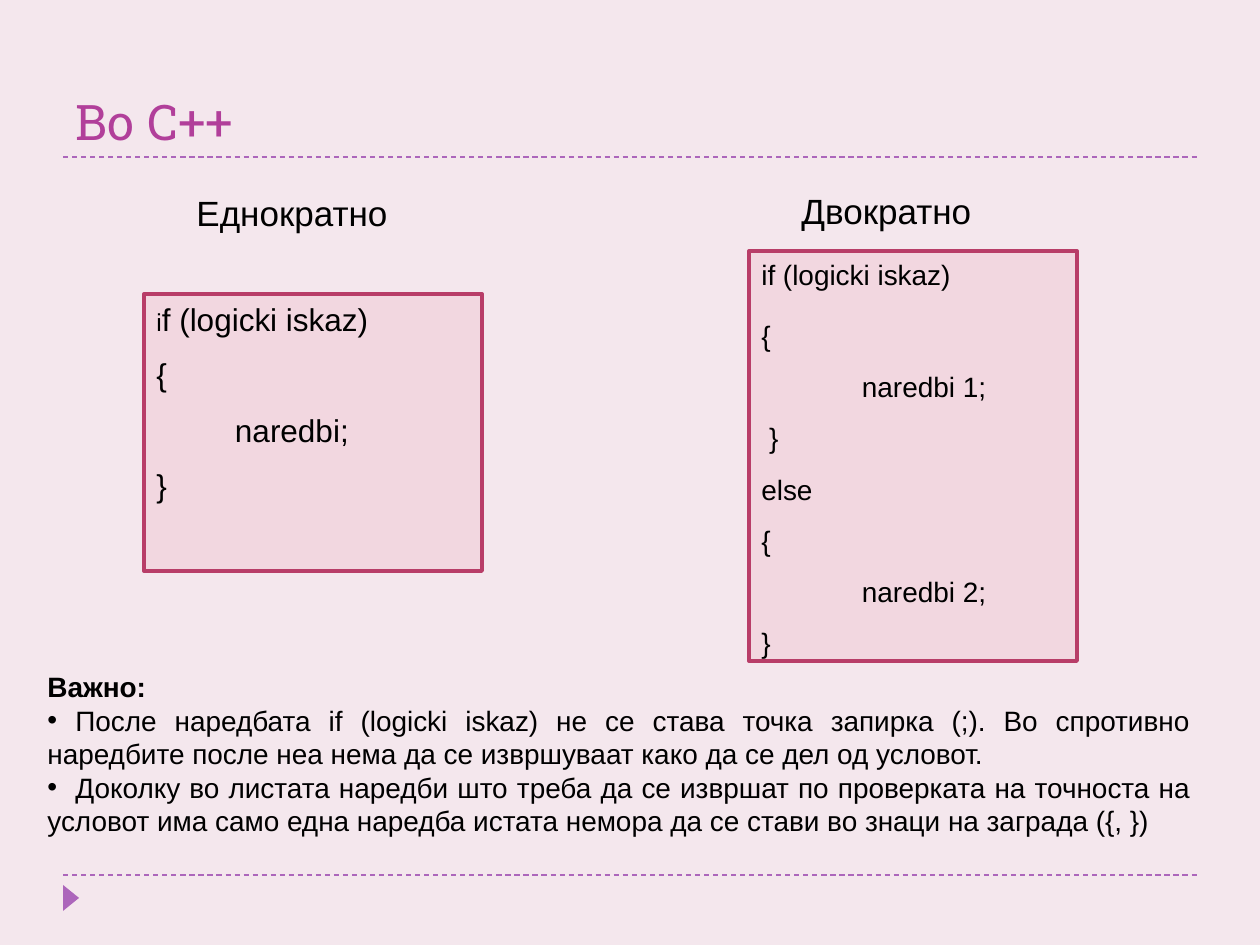
from lxml import etree
from pptx import Presentation
from pptx.dml.color import RGBColor
from pptx.enum.dml import MSO_LINE
from pptx.enum.shapes import MSO_CONNECTOR, MSO_SHAPE
from pptx.enum.text import MSO_ANCHOR, PP_ALIGN
from pptx.oxml.ns import qn
from pptx.util import Pt

EMU_PER_PX = 914400 / 126
DASH = MSO_LINE.DASH
STRAIGHT = MSO_CONNECTOR.STRAIGHT
RECTANGLE, TRIANGLE = MSO_SHAPE.RECTANGLE, MSO_SHAPE.ISOSCELES_TRIANGLE
TOP, MIDDLE, BOTTOM = MSO_ANCHOR.TOP, MSO_ANCHOR.MIDDLE, MSO_ANCHOR.BOTTOM
LEFT, JUSTIFY = PP_ALIGN.LEFT, PP_ALIGN.JUSTIFY

BACKGROUND, TITLE, ACCENT = "F4E7ED", "B13F9A", "AC66BB"
CODE_FILL, CODE_LINE, BLACK = "F2D7E0", "B83D68", "000000"
BODY_FONT, TITLE_FONT = "Arial", "Roboto Slab"

SINGLE_CODE = ["if (logicki iskaz)", "{", "         naredbi;", "}"]
DOUBLE_CODE = ["if (logicki iskaz)", "{", "             naredbi 1;", " }",
               "else", "{", "             naredbi 2;", "}"]
NOTES = [
    "После наредбата if (logicki iskaz) не се става точка запирка (;). "
    "Во спротивно наредбите после неа нема да се извршуваат како да се дел од условот.",
    "Доколку во листата наредби што треба да се извршат по проверката на точноста на "
    "условот има само една наредба истата немора да се стави во знаци на заграда ({, })",
]


def px(value):
    return round(value * EMU_PER_PX)


def box_emu(box):
    return [px(value) for value in box]


def color(hex_string):
    return RGBColor.from_string(hex_string)


def set_font(font, size, name=BODY_FONT, hex_string=BLACK, bold=False):
    font.size, font.name, font.bold = Pt(size), name, bold
    font.color.rgb = color(hex_string)


def add_rule(slide, left, top, width):
    line = slide.shapes.add_connector(STRAIGHT, *box_emu((left, top, left + width, top)))
    line.line.color.rgb = color(ACCENT)
    line.line.width = Pt(0.75)
    line.line.dash_style = DASH
    etree.SubElement(line._element.spPr, qn("a:effectLst"))


def add_frame(slide, box):
    """Draw the two dashed rules and the footer marker."""
    left, top, width, height = box
    add_rule(slide, left, top + height, width)
    add_rule(slide, left, top, width)
    marker = slide.shapes.add_shape(
        TRIANGLE, *box_emu((left - 5, top + height + 15, 26, 16)))
    marker.rotation = 90
    marker.shadow.inherit = False
    marker.fill.solid()
    marker.fill.fore_color.rgb = color(ACCENT)
    marker.line.fill.background()


def fill_title(slide, box, text):
    title = slide.shapes.title
    title.left, title.top, title.width, title.height = box_emu(box)
    frame = title.text_frame
    frame.text = text
    frame.vertical_anchor = BOTTOM
    paragraph = frame.paragraphs[0]
    paragraph.alignment = LEFT
    set_font(paragraph.font, 28, TITLE_FONT, TITLE)


def add_heading(slide, box, text):
    frame = slide.shapes.add_textbox(*box_emu(box)).text_frame
    frame.word_wrap = False
    frame.text = text
    set_font(frame.paragraphs[0].font, 20)


def add_code(slide, box, lines, size):
    """Draw a bordered code box and return its paragraphs."""
    shape = slide.shapes.add_shape(RECTANGLE, *box_emu(box))
    shape.shadow.inherit = False
    shape.fill.solid()
    shape.fill.fore_color.rgb = color(CODE_FILL)
    shape.line.color.rgb = color(CODE_LINE)
    shape.line.width = Pt(2.25)
    frame = shape.text_frame
    frame.word_wrap = True
    frame.vertical_anchor = TOP
    frame.text = "\n".join(lines)
    for paragraph in frame.paragraphs:
        paragraph.alignment = LEFT
        paragraph.space_after = Pt(10)
        set_font(paragraph.font, size)
    return frame.paragraphs


def add_bullet(paragraph, gap):
    """Put a bullet before the first line, with the text at a tab stop."""
    properties = paragraph._p.get_or_add_pPr()
    properties.set("marL", "0")
    properties.set("indent", "0")
    etree.SubElement(properties, qn("a:buFont"), typeface=BODY_FONT)
    etree.SubElement(properties, qn("a:buChar"), char="•")
    tabs = etree.SubElement(properties, qn("a:tabLst"))
    etree.SubElement(tabs, qn("a:tab"), pos=str(px(gap)), algn="l")


def add_notes(slide, box, heading, notes):
    frame = slide.shapes.add_textbox(*box_emu(box)).text_frame
    frame.word_wrap = True
    frame.vertical_anchor = MIDDLE
    frame.text = heading
    set_font(frame.paragraphs[0].font, 16, bold=True)
    for note in notes:
        paragraph = frame.add_paragraph()
        paragraph.text = "\t" + note
        paragraph.alignment = JUSTIFY
        add_bullet(paragraph, 28)
        set_font(paragraph.font, 16)


def main():
    presentation = Presentation()
    presentation.slide_width, presentation.slide_height = px(1260), px(945)
    slide = presentation.slides.add_slide(presentation.slide_layouts[5])
    slide.background.fill.solid()
    slide.background.fill.fore_color.rgb = color(BACKGROUND)

    add_frame(slide, (63, 157, 1134, 718))
    fill_title(slide, (63, 21, 1134, 136), "Во C++")
    add_heading(slide, (184, 185, 218, 55), "Еднократно")
    add_heading(slide, (789, 183, 197, 55), "Двократно")

    single = add_code(slide, (144, 294, 338, 277), SINGLE_CODE, 18)
    first_line = single[0]
    first_line.text = "i"
    first_line.runs[0].font.size = Pt(14)
    first_line.add_run().text = SINGLE_CODE[0][1:]

    double = add_code(slide, (749, 251, 328, 410), DOUBLE_CODE, 16)
    double[1].space_before = Pt(6)

    add_notes(slide, (35, 662, 1168, 183), "Важно:", NOTES)
    presentation.save("out.pptx")


if __name__ == "__main__":
    main()
